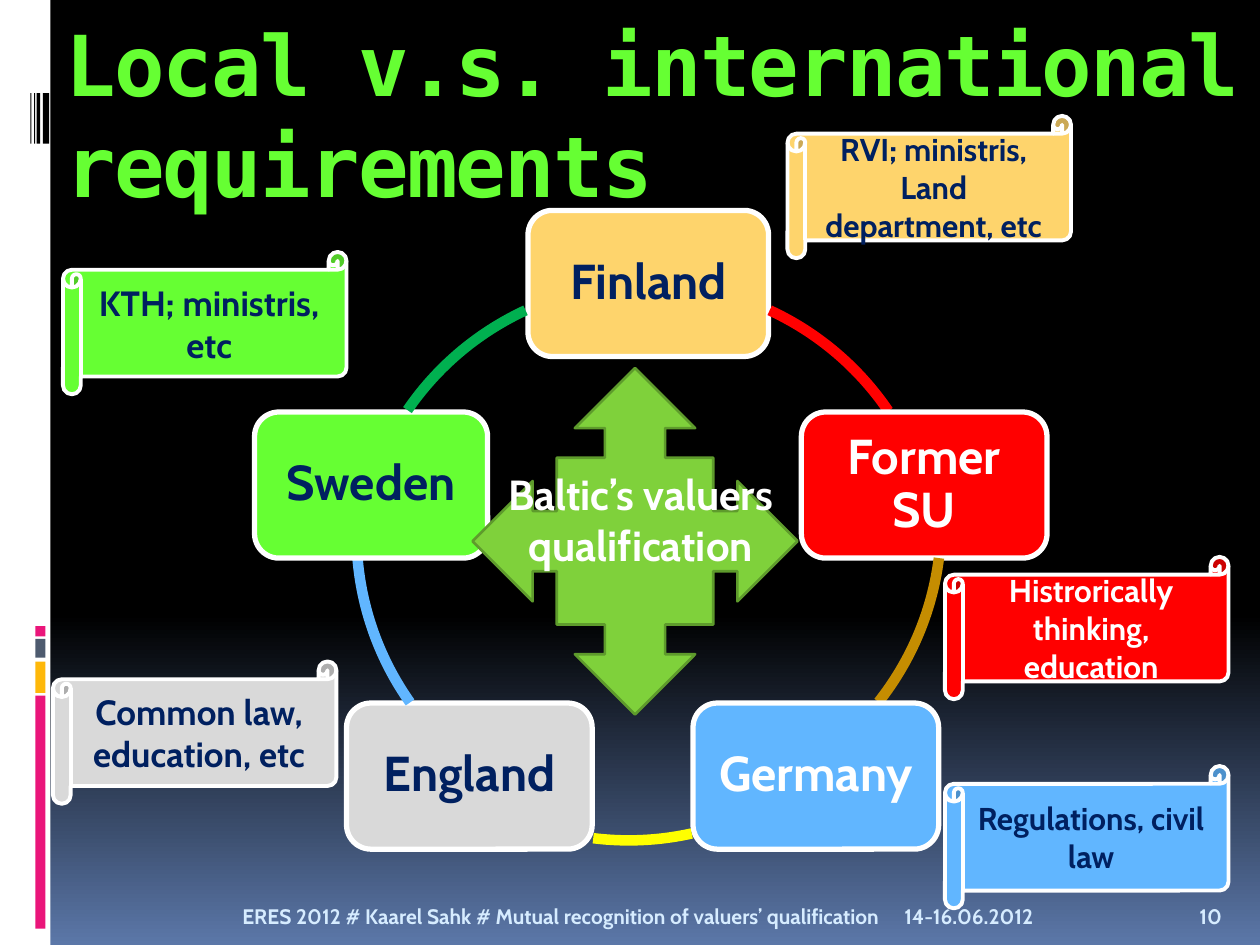
from dataclasses import dataclass

from pptx import Presentation
from pptx.dml.color import RGBColor
from pptx.enum.shapes import MSO_SHAPE
from pptx.enum.text import MSO_ANCHOR, PP_ALIGN
from pptx.util import Emu, Pt

PX = 9144  # 100 px to the inch
RECT, ROUNDED, ARC = MSO_SHAPE.RECTANGLE, MSO_SHAPE.ROUNDED_RECTANGLE, MSO_SHAPE.ARC
SCROLL, QUAD_ARROW = MSO_SHAPE.HORIZONTAL_SCROLL, MSO_SHAPE.QUAD_ARROW_CALLOUT
TOP, MIDDLE, BOTTOM = MSO_ANCHOR.TOP, MSO_ANCHOR.MIDDLE, MSO_ANCHOR.BOTTOM
LEFT, CENTER, RIGHT = PP_ALIGN.LEFT, PP_ALIGN.CENTER, PP_ALIGN.RIGHT

COLORS = {
    "black": "000000", "white": "FFFFFF", "dusk": "5B77A8", "navy": "002060",
    "pink": "EA157A", "amber": "FEB80A", "slate": "4E5B6F",
    "lime": "66FF33", "sand": "FED46C", "red": "FF0000", "sky": "61B6FF",
    "grey": "D9D9D9", "ochre": "C58D01", "yellow": "FFFF00", "green": "00B050",
    "leaf": "7FD13B", "leaf edge": "5E9B2C", "pale": "D6ECFF",
}

Box = tuple[int, int, int, int]


@dataclass
class Bar:
    box: Box
    color: str


@dataclass
class Country:
    name: str
    box: Box
    fill: str
    ink: str
    arc_corner: tuple[int, int]
    arc_angles: tuple[float, float]  # degrees, clockwise from the right
    arc_color: str


@dataclass
class Note:
    text: str
    corner: tuple[int, int]
    fill: str
    ink: str
    size: int


@dataclass
class Footer:
    text: str
    left: int
    width: int
    align: PP_ALIGN


ARC_DIAMETER = 462
NOTE_SIZE = (225, 113)

BARS = [
    Bar((0, 0, 40, 750), "white"),
    Bar((28, 552, 8, 185), "pink"),
    Bar((28, 525, 8, 25), "amber"),
    Bar((28, 507, 8, 15), "slate"),
    Bar((28, 497, 8, 8), "pink"),
    Bar((34, 74, 5, 40), "black"),
    Bar((29, 74, 3, 40), "black"),
    Bar((27, 74, 1, 40), "black"),
    Bar((24, 74, 1, 40), "black"),
]
COUNTRIES = [
    Country("Finland", (419, 167, 191, 116), "sand", "navy", (283, 225), (294.8, 325.8), "red"),
    Country("Former SU", (636, 327, 195, 116), "red", "white", (285, 183), (7.2, 38.3), "ochre"),
    Country("Germany", (550, 558, 195, 116), "sky", "white", (268, 205), (77.5, 97), "yellow"),
    Country("England", (275, 558, 195, 116), "grey", "navy", (283, 193), (144.7, 175.3), "sky"),
    Country("Sweden", (202, 327, 185, 116), "lime", "navy", (283, 225), (214.4, 245.2), "green"),
]
NOTES = [
    Note("KTH; ministris, etc", (50, 200), "lime", "navy", 20),
    Note("RVI; ministris, Land department, etc", (625, 92), "sand", "navy", 18),
    Note("Common law, education, etc", (42, 525), "grey", "navy", 20),
    Note("Regulations, civil law", (750, 608), "sky", "navy", 18),
    Note("Histrorically thinking, education", (750, 442), "red", "white", 18),
]
FOOTERS = [
    Footer("14-16.06.2012", 708, 233, LEFT),
    Footer("ERES 2012 # Kaarel Sahk # Mutual recognition of valuers’ qualification",
           100, 608, RIGHT),
    Footer("10", 942, 50, LEFT),
]


def rgb(color: str) -> RGBColor:
    return RGBColor.from_string(COLORS[color])


def lengths(box: Box) -> list[Emu]:
    return [Emu(value * PX) for value in box]


def write(shape, text: str, *, size: int, color: str, font: str = "Cabin",
          align: PP_ALIGN = CENTER, anchor: MSO_ANCHOR = MIDDLE,
          insets: Box = (10, 5, 10, 5), line_spacing: float = 1.0,
          tracking: int = 0) -> None:
    """Put bold text into a shape; tracking is in points."""
    frame = shape.text_frame
    frame.word_wrap = True
    frame.vertical_anchor = anchor
    (frame.margin_left, frame.margin_top,
     frame.margin_right, frame.margin_bottom) = lengths(insets)
    paragraph = frame.paragraphs[0]
    paragraph.alignment = align
    paragraph.line_spacing = line_spacing
    run = paragraph.add_run()
    run.text = text
    run.font.name = font
    run.font.size = Pt(size)
    run.font.bold = True
    run.font.color.rgb = rgb(color)
    if tracking:
        run.font._element.set("spc", str(tracking * 100))


def add_block(slide, kind: MSO_SHAPE, box: Box, fill: str | None = None,
              line: str | None = None, line_width: float = 0):
    block = slide.shapes.add_shape(kind, *lengths(box))
    block.shadow.inherit = False
    if fill:
        block.fill.solid()
        block.fill.fore_color.rgb = rgb(fill)
    else:
        block.fill.background()
    if line:
        block.line.color.rgb = rgb(line)
        block.line.width = Pt(line_width)
    else:
        block.line.fill.background()
    return block


def add_country(slide, country: Country) -> None:
    card = add_block(slide, ROUNDED, country.box, country.fill, "white", 3)
    write(card, country.name, size=28, color=country.ink,
          insets=(12, 12, 12, 12), line_spacing=0.9)
    arc = add_block(slide, ARC, (*country.arc_corner, ARC_DIAMETER, ARC_DIAMETER),
                    line=country.arc_color, line_width=6)
    for index, degrees in enumerate(country.arc_angles):
        arc.adjustments[index] = degrees * 0.6  # 60000 units a degree, over 100000


def add_note(slide, note: Note) -> None:
    scroll = add_block(slide, SCROLL, (*note.corner, *NOTE_SIZE), note.fill, "white", 2.25)
    write(scroll, note.text, size=note.size, color=note.ink)


def add_label(slide, box: Box, text: str, **text_format) -> None:
    write(slide.shapes.add_textbox(*lengths(box)), text, **text_format)


def main() -> None:
    deck = Presentation()
    deck.slide_width, deck.slide_height = Emu(1000 * PX), Emu(750 * PX)
    slide = deck.slides.add_slide(deck.slide_layouts[6])

    # Background: black, fading to blue at the foot
    backdrop = slide.background.fill
    backdrop.gradient()
    backdrop.gradient_angle = 270
    for stop, position, color in zip(backdrop.gradient_stops, (0.65, 1), ("black", "dusk")):
        stop.position = position
        stop.color.rgb = rgb(color)

    # Side band
    for bar in BARS:
        add_block(slide, RECT, bar.box, bar.color)

    # Title
    add_label(slide, (42, 0, 958, 100), "Local v.s. international requirements",
              size=48, color="lime", font="DejaVu Sans Mono", align=LEFT,
              anchor=TOP, insets=(10, 10, 10, 5), tracking=-1)

    # Ring of countries and their notes
    for country in COUNTRIES:
        add_country(slide, country)
    for note in NOTES:
        add_note(slide, note)

    # Centre
    add_block(slide, QUAD_ARROW, (375, 292, 258, 275), "leaf", "leaf edge", 1.5)
    add_label(slide, (392, 358, 233, 108), "Baltic’s valuers qualification",
              size=24, color="white")

    # Footer
    for footer in FOOTERS:
        add_label(slide, (footer.left, 702, footer.width, 40), footer.text,
                  size=12, color="pale", align=footer.align, anchor=BOTTOM)

    deck.save("out.pptx")


if __name__ == "__main__":
    main()
